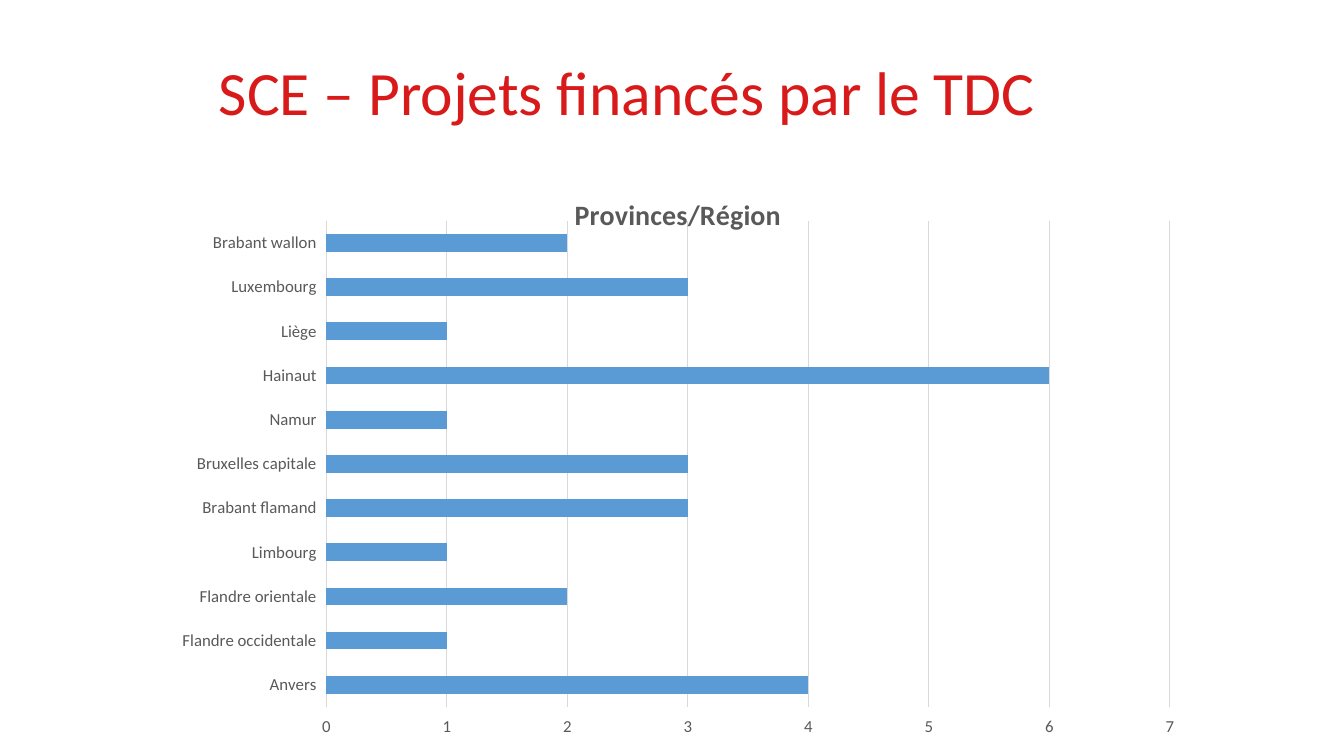
from lxml import etree
from pptx import Presentation
from pptx.chart.data import CategoryChartData
from pptx.dml.color import RGBColor
from pptx.enum.chart import XL_CHART_TYPE, XL_TICK_MARK
from pptx.enum.text import MSO_ANCHOR, PP_ALIGN
from pptx.oxml.ns import qn
from pptx.util import Cm, Pt

BAR = XL_CHART_TYPE.BAR_CLUSTERED
OUTSIDE = XL_TICK_MARK.OUTSIDE
NO_TICK = XL_TICK_MARK.NONE
LEFT = PP_ALIGN.LEFT
MIDDLE = MSO_ANCHOR.MIDDLE

RED = RGBColor(0xD8, 0x1A, 0x1A)
BLUE = RGBColor(0x5B, 0x9B, 0xD5)
GREY = RGBColor(0x59, 0x59, 0x59)
PALE = RGBColor(0xD9, 0xD9, 0xD9)

COUNTS = {
    "Anvers": 4,
    "Flandre occidentale": 1,
    "Flandre orientale": 2,
    "Limbourg": 1,
    "Brabant flamand": 3,
    "Bruxelles capitale": 3,
    "Namur": 1,
    "Hainaut": 6,
    "Liège": 1,
    "Luxembourg": 3,
    "Brabant wallon": 2,
}
EDGES = {"xMode": "edge", "yMode": "edge"}
HEAD = EDGES | {"x": 0.4, "y": 0}
PLOT = {"layoutTarget": "inner"} | EDGES | {
    "x": 0.162, "y": 0.053, "w": 0.826, "h": 0.826}


def style(font, size, color, bold=False):
    look = {"name": "Calibri", "size": Pt(size), "bold": bold}
    for key, value in look.items():
        setattr(font, key, value)
    font.color.rgb = color


def place(part, index, spots):
    """Give a chart part a manual layout, as fractions of the chart."""
    for old in part.findall(qn("c:layout")):
        part.remove(old)
    layout = etree.Element(qn("c:layout"))
    manual = etree.SubElement(layout, qn("c:manualLayout"))
    for key, value in spots.items():
        etree.SubElement(manual, qn(f"c:{key}")).set("val", str(value))
    part.insert(index, layout)


prs = Presentation()
prs.slide_width, prs.slide_height = Cm(33.87), Cm(19.05)
slide = prs.slides.add_slide(prs.slide_layouts[5])

# Slide title
title = slide.shapes.title
title.left, title.top = Cm(5.26), Cm(0.56)
title.width, title.height = Cm(24), Cm(3.68)
frame = title.text_frame
frame.text = "SCE – Projets financés par le TDC"
frame.vertical_anchor = MIDDLE
para = frame.paragraphs[0]
para.alignment = LEFT
para.line_spacing = 0.9
style(para.runs[0].font, 44, RED)

# Bar chart
data = CategoryChartData()
data.categories = list(COUNTS)
data.add_series("Series 1", list(COUNTS.values()))
chart = slide.shapes.add_chart(
    BAR, Cm(4.06), Cm(4.78), Cm(25.73), Cm(14.83), data).chart
style(chart.font, 10, GREY)
chart.has_legend = False

chart.has_title = True
head = chart.chart_title
head.include_in_layout = False
head.text_frame.text = "Provinces/Région"
style(head.text_frame.paragraphs[0].runs[0].font, 20, GREY, bold=True)

plot = chart.plots[0]
plot.gap_width = 150
plot.vary_by_categories = False
fill = plot.series[0].format.fill
fill.solid()
fill.fore_color.rgb = BLUE

for axis in (chart.category_axis, chart.value_axis):
    axis.major_tick_mark = OUTSIDE
    axis.minor_tick_mark = NO_TICK
    axis.format.line.fill.background()
    style(axis.tick_labels.font, 12, GREY)

scale = chart.value_axis
scale.minimum_scale, scale.maximum_scale, scale.major_unit = 0, 7, 1
scale.has_major_gridlines = True
grid = scale.major_gridlines.format.line
grid.color.rgb = PALE
grid.width = Pt(0.75)

# Fixed places of chart title and plot area
place(head._element, 1, HEAD)
place(plot._element.getparent(), 0, PLOT)

prs.save("out.pptx")
